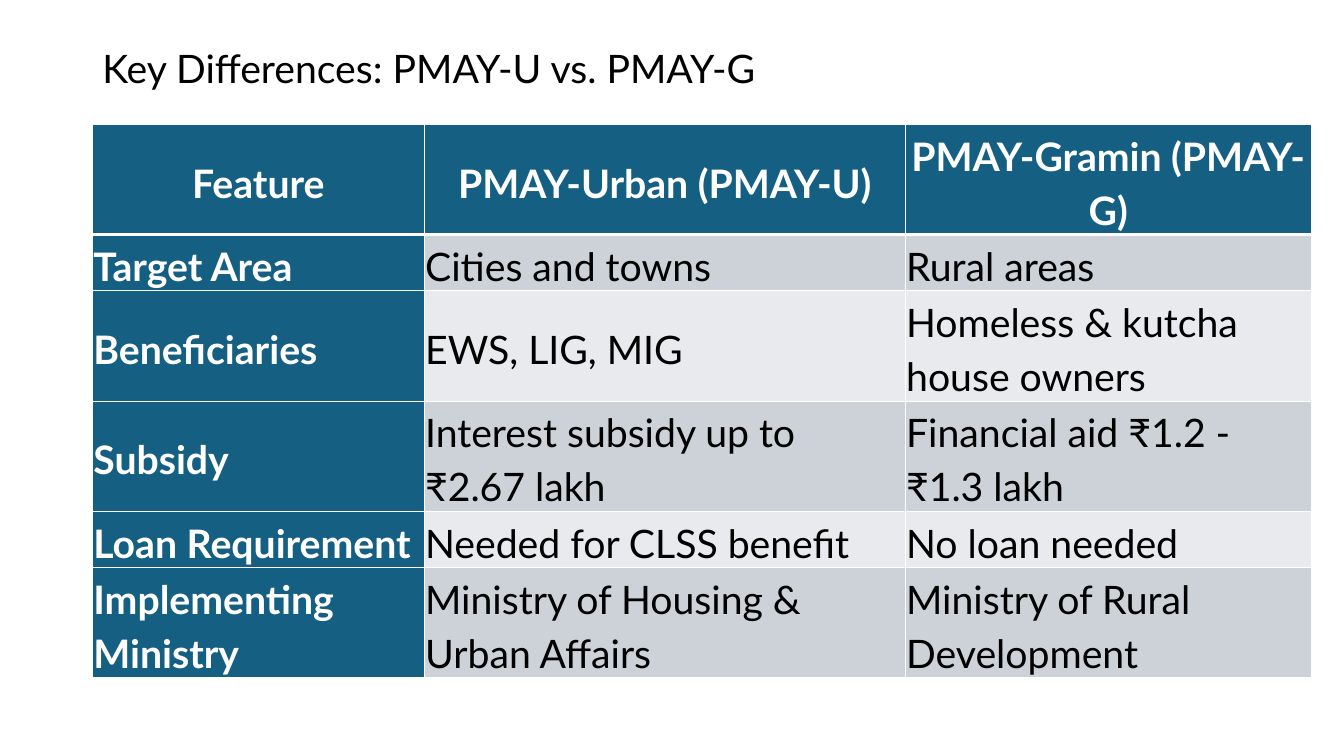
from dataclasses import dataclass

from lxml.etree import SubElement
from pptx import Presentation
from pptx.dml.color import RGBColor
from pptx.enum.text import MSO_ANCHOR, PP_ALIGN
from pptx.oxml.ns import qn
from pptx.util import Pt


@dataclass(frozen=True)
class Theme:
    font: str = "Lato"
    text_size: float = 28
    accent: str = "156082"
    dark: str = "000000"
    light: str = "FFFFFF"
    bands: tuple = ("CCD2D8", "E8EAED")
    thin_border: float = 1
    thick_border: float = 3


THEME = Theme()

TITLE = "Key Differences: PMAY-U vs. PMAY-G"
COMPARISON = (
    ("Feature", "PMAY-Urban (PMAY-U)", "PMAY-Gramin (PMAY-G)"),
    ("Target Area", "Cities and towns", "Rural areas"),
    ("Beneficiaries", "EWS, LIG, MIG", "Homeless & kutcha house owners"),
    ("Subsidy", "Interest subsidy up to ₹2.67 lakh", "Financial aid ₹1.2 - ₹1.3 lakh"),
    ("Loan Requirement", "Needed for CLSS benefit", "No loan needed"),
    ("Implementing Ministry", "Ministry of Housing & Urban Affairs", "Ministry of Rural Development"),
)
COLUMN_WIDTHS = (237, 343.6, 290)
ROW_HEIGHT = 29.5


def write_text(text_frame, text, color, bold=False):
    text_frame.text = text
    text_frame.word_wrap = True
    paragraph = text_frame.paragraphs[0]
    font = paragraph.runs[0].font
    font.name = THEME.font
    font.size = Pt(THEME.text_size)
    font.bold = bold
    font.color.rgb = RGBColor.from_string(color)
    return paragraph


def add_title(slide, text, left, top, width, height):
    shape = slide.shapes.add_textbox(Pt(left), Pt(top), Pt(width), Pt(height))
    paragraph = write_text(shape.text_frame, text, THEME.dark)
    paragraph.line_spacing = 0.9
    shape.text_frame.vertical_anchor = MSO_ANCHOR.MIDDLE


def set_borders(cell, top, bottom):
    widths = {"L": THEME.thin_border, "R": THEME.thin_border, "T": top, "B": bottom}
    properties = cell._tc.get_or_add_tcPr()
    for side, width in widths.items():
        line = SubElement(properties, qn(f"a:ln{side}"), w=str(Pt(width)))
        fill = SubElement(line, qn("a:solidFill"))
        SubElement(fill, qn("a:srgbClr"), val=THEME.light)


def format_cell(cell, text, row, column):
    is_heading = row == 0 or column == 0
    cell.margin_left = cell.margin_right = Pt(0.75)
    cell.margin_top = cell.margin_bottom = Pt(0.75)
    cell.vertical_anchor = MSO_ANCHOR.MIDDLE
    set_borders(
        cell,
        top=THEME.thick_border if row == 1 else THEME.thin_border,
        bottom=THEME.thick_border if row == 0 else THEME.thin_border,
    )
    background = THEME.accent if is_heading else THEME.bands[(row - 1) % 2]
    cell.fill.solid()
    cell.fill.fore_color.rgb = RGBColor.from_string(background)

    color = THEME.light if is_heading else THEME.dark
    paragraph = write_text(cell.text_frame, text, color, bold=is_heading)
    paragraph.alignment = PP_ALIGN.CENTER if row == 0 else PP_ALIGN.LEFT
    paragraph.line_spacing = 1.15
    paragraph.space_after = Pt(8)


def add_comparison_table(slide, left, top, height):
    shape = slide.shapes.add_table(
        len(COMPARISON), len(COLUMN_WIDTHS),
        Pt(left), Pt(top), Pt(sum(COLUMN_WIDTHS)), Pt(height),
    )
    table = shape.table
    for column, width in zip(table.columns, COLUMN_WIDTHS):
        column.width = Pt(width)
    for row in table.rows:
        row.height = Pt(ROW_HEIGHT)
    shape.height = Pt(height)
    for row, texts in enumerate(COMPARISON):
        for column, text in enumerate(texts):
            format_cell(table.cell(row, column), text, row, column)


def main():
    presentation = Presentation()
    presentation.slide_width = Pt(960)
    presentation.slide_height = Pt(540)
    slide = presentation.slides.add_slide(presentation.slide_layouts[6])
    add_title(slide, TITLE, left=66, top=28.8, width=828, height=43.2)
    add_comparison_table(slide, left=66, top=88.8, height=384)
    presentation.save("out.pptx")


if __name__ == "__main__":
    main()
